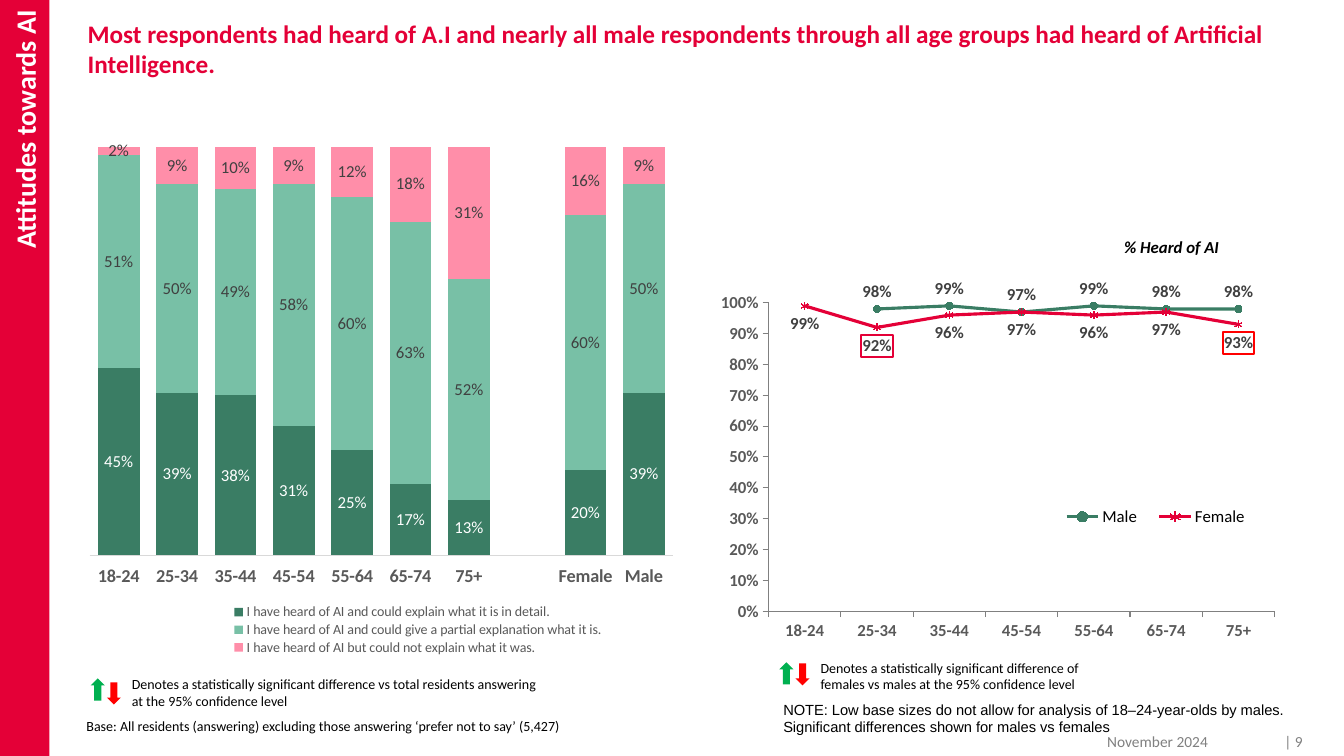
from lxml.etree import SubElement
from pptx import Presentation
from pptx.chart.data import CategoryChartData
from pptx.dml.color import RGBColor
from pptx.enum.chart import XL_CHART_TYPE as CHART, XL_LABEL_POSITION as LABEL
from pptx.enum.chart import XL_LEGEND_POSITION as LEGEND, XL_MARKER_STYLE as MARKER
from pptx.enum.chart import XL_TICK_LABEL_POSITION as TICK_LABEL, XL_TICK_MARK as TICK
from pptx.enum.shapes import MSO_SHAPE as SHAPE
from pptx.enum.text import MSO_ANCHOR as ANCHOR, PP_ALIGN as ALIGN
from pptx.oxml import parse_xml
from pptx.oxml.ns import nsdecls, qn
from pptx.util import Pt

PX = 9144
COLORS = {
    "brand": "E40037", "white": "FFFFFF", "black": "000000", "footer": "808080",
    "axis": "808080", "baseline": "D9D9D9", "axis_text": "595959", "label": "404040",
    "detail": "3A7D64", "partial": "78C0A6", "unexplained": "FF8EA9",
    "higher": "00B050", "lower": "FF0000",
}
AGES = ["18-24", "25-34", "35-44", "45-54", "55-64", "65-74", "75+"]
AWARENESS = [
    ("I have heard of AI and could explain what it is in detail.", "detail", "white",
     [0.45, 0.39, 0.38, 0.31, 0.25, 0.17, 0.13, None, 0.2, 0.39]),
    ("I have heard of AI and could give a partial explanation what it is.", "partial", "label",
     [0.51, 0.5, 0.49, 0.58, 0.6, 0.63, 0.52, None, 0.6, 0.5]),
    ("I have heard of AI but could not explain what it was.", "unexplained", "label",
     [0.02, 0.09, 0.1, 0.09, 0.12, 0.18, 0.31, None, 0.16, 0.09]),
]
HEARD = [
    ("Male", "detail", MARKER.CIRCLE, LABEL.ABOVE, {},
     [None, 0.98, 0.99, 0.97, 0.99, 0.98, 0.98]),
    ("Female", "brand", MARKER.STAR, LABEL.BELOW, {1: "brand", 6: "lower"},
     [0.99, 0.92, 0.96, 0.97, 0.96, 0.97, 0.93]),
]


def rgb(name):
    return RGBColor.from_string(COLORS[name])


def emu(box):
    return [length * PX for length in box]


def style(font, size, color, bold=False, name="Calibri"):
    font.name = name
    font.size = Pt(size)
    font.bold = bold
    font.color.rgb = rgb(color)


def fill(part, color):
    part.fill.solid()
    part.fill.fore_color.rgb = rgb(color)


def add_text(slide, box, text, size, color="black", bold=False, name="Calibri", align=ALIGN.LEFT):
    shape = slide.shapes.add_textbox(*emu(box))
    shape.text_frame.word_wrap = True
    shape.text_frame.text = text
    para = shape.text_frame.paragraphs[0]
    para.alignment = align
    style(para.runs[0].font, size, color, bold, name)
    return para


def add_block(slide, kind, box, color):
    shape = slide.shapes.add_shape(kind, *emu(box))
    shape.shadow.inherit = False
    fill(shape, color)
    shape.line.fill.background()
    return shape


def add_sidebar(slide, box):
    frame = add_block(slide, SHAPE.RECTANGLE, box, "brand").text_frame
    frame.text = "Attitudes towards AI"
    frame.vertical_anchor = ANCHOR.MIDDLE
    frame.margin_left = frame.margin_right = frame.margin_top = 10 * PX
    frame.margin_bottom = 5 * PX
    frame._txBody.bodyPr.set("vert", "vert270")
    para = frame.paragraphs[0]
    para.alignment = ALIGN.RIGHT
    style(para.runs[0].font, 20, "white", True)


def add_significance_key(slide, box, text, drop):
    left, top, width, height = box
    add_block(slide, SHAPE.UP_ARROW, (left, top + 8, 14, 22), "higher")
    add_block(slide, SHAPE.DOWN_ARROW, (left + 16, top + 8 + drop, 14, 22), "lower")
    add_text(slide, (left + 31, top, width - 31, height), text, 10)


def place_part(part, index, fractions, inner=False):
    for old in part.findall(qn("c:layout")):
        part.remove(old)
    layout = parse_xml(f"<c:layout {nsdecls('c')}/>")
    manual = SubElement(layout, qn("c:manualLayout"))
    settings = [("layoutTarget", "inner")] if inner else []
    settings += [("xMode", "edge"), ("yMode", "edge"), *zip("xywh", fractions)]
    for tag, value in settings:
        SubElement(manual, qn(f"c:{tag}")).set("val", str(value))
    part.insert(index, layout)


def add_chart(slide, box, kind, categories, rows, plot_area, legend_area, legend_size, legend_side):
    data = CategoryChartData(number_format="0%")
    data.categories = categories
    for name, *_, values in rows:
        data.add_series(name, values)
    chart = slide.shapes.add_chart(kind, *emu(box), data).chart
    chart.has_title = False
    style(chart.font, 10, "black")
    chart.has_legend = True
    chart.legend.position = legend_side
    chart.legend.include_in_layout = False
    style(chart.legend.font, legend_size, "black" if legend_size > 10 else "axis_text")
    place_part(chart.legend._element, 1, legend_area)
    place_part(chart._chartSpace.chart.plotArea, 0, plot_area, inner=True)
    chart.value_axis.has_major_gridlines = False
    chart.value_axis.minimum_scale = 0
    chart.value_axis.maximum_scale = 1
    return chart


def format_axis(axis, size, color, tick):
    axis.major_tick_mark = tick
    axis.minor_tick_mark = TICK.NONE
    axis.tick_label_position = TICK_LABEL.LOW
    style(axis.tick_labels.font, size, "axis_text", True)
    axis.format.line.color.rgb = rgb(color)
    axis.format.line.width = Pt(0.75)


def label_series(series, color, bold=False):
    labels = series.data_labels
    labels.show_value = True
    labels.number_format = "0%"
    labels.number_format_is_linked = False
    style(labels.font, 12, color, bold)
    return labels


def frame_label(series, index, color, position):
    label = series.points[index].data_label
    style(label.font, 12, "label", True)
    label.position = position
    text_props = series._element.xpath(f"c:dLbls/c:dLbl[c:idx/@val='{index}']/c:txPr")[0]
    text_props.addprevious(parse_xml(
        f'<c:spPr {nsdecls("c", "a")}><a:ln w="19050"><a:solidFill>'
        f'<a:srgbClr val="{COLORS[color]}"/></a:solidFill></a:ln></c:spPr>'))


def add_awareness_chart(slide, box):
    chart = add_chart(slide, box, CHART.COLUMN_STACKED_100, AGES + ["", "Female", "Male"],
                      AWARENESS, (0.003, 0.067, 0.981, 0.747), (0.23, 0.9, 0.65, 0.1),
                      10, LEGEND.TOP)
    chart.value_axis.visible = False
    format_axis(chart.category_axis, 13, "baseline", TICK.NONE)
    plot = chart.plots[0]
    plot.gap_width = 40
    plot.overlap = 100
    for series, (_, color, label_color, _) in zip(plot.series, AWARENESS):
        fill(series.format, color)
        label_series(series, label_color)


def add_heard_chart(slide, box):
    chart = add_chart(slide, box, CHART.LINE_MARKERS, AGES, HEARD,
                      (0.094, 0.206, 0.838, 0.647), (0.56, 0.62, 0.35, 0.07),
                      12, LEGEND.RIGHT)
    format_axis(chart.category_axis, 12, "axis", TICK.OUTSIDE)
    format_axis(chart.value_axis, 12, "axis", TICK.OUTSIDE)
    chart.value_axis.major_unit = 0.1
    chart.value_axis.tick_labels.number_format = "0%"
    chart.value_axis.tick_labels.number_format_is_linked = False
    for series, (_, color, marker, position, framed, _) in zip(chart.plots[0].series, HEARD):
        series.smooth = False
        series.format.line.color.rgb = rgb(color)
        series.format.line.width = Pt(2.25)
        series.marker.style = marker
        series.marker.size = 5
        fill(series.marker.format, color)
        series.marker.format.line.color.rgb = rgb(color)
        label_series(series, "label", True).position = position
        for index, frame_color in framed.items():
            frame_label(series, index, frame_color, position)


def add_awareness_panel(slide, box):
    left, top, width, height = box
    add_awareness_chart(slide, (left + 11, top, 590, 543))
    add_significance_key(slide, (left + 14, top + 556, 464, 44),
                         "Denotes a statistically significant difference vs total residents "
                         "answering at the 95% confidence level", 4)
    add_text(slide, (left, top + height - 27, width, 27),
             "Base: All residents (answering) excluding those answering "
             "‘prefer not to say’ (5,427)", 10)


def add_heard_panel(slide, box):
    left, top, width, height = box
    add_heard_chart(slide, (left, top, 599, 473))
    para = add_text(slide, (left + 285, top + 27, 342, 30), "% Heard of AI", 12,
                    bold=True, align=ALIGN.CENTER)
    para.space_before = Pt(6)
    para.runs[0].font.italic = True
    add_significance_key(slide, (left + 67, top + 446, 328, 44),
                         "Denotes a statistically significant difference of females vs males "
                         "at the 95% confidence level", 1)
    add_text(slide, (left + 61, top + height - 45, 535, 45),
             "NOTE: Low base sizes do not allow for analysis of 18–24-year-olds by males. "
             "Significant differences shown for males vs females", 10.5, name="Arial")


def add_footer(slide, box):
    left, top, width, height = box
    add_text(slide, (left, top, 240, height), "November 2024", 11, "footer", align=ALIGN.RIGHT)
    add_text(slide, (left + width - 85, top, 85, height), "| 9", 11, "footer", align=ALIGN.RIGHT)


def main():
    deck = Presentation()
    deck.slide_width, deck.slide_height = 1333 * PX, 750 * PX
    slide = deck.slides.add_slide(deck.slide_layouts[6])
    add_sidebar(slide, (0, 0, 49, 750))
    add_text(slide, (77, 13, 1225, 141),
             "Most respondents had heard of A.I and nearly all male respondents through all "
             "age groups had heard of Artificial Intelligence.", 18, "brand", True)
    add_footer(slide, (968, 721, 334, 15))
    add_awareness_panel(slide, (76, 109, 613, 625))
    add_heard_panel(slide, (706, 203, 627, 532))
    deck.save("out.pptx")


if __name__ == "__main__":
    main()
